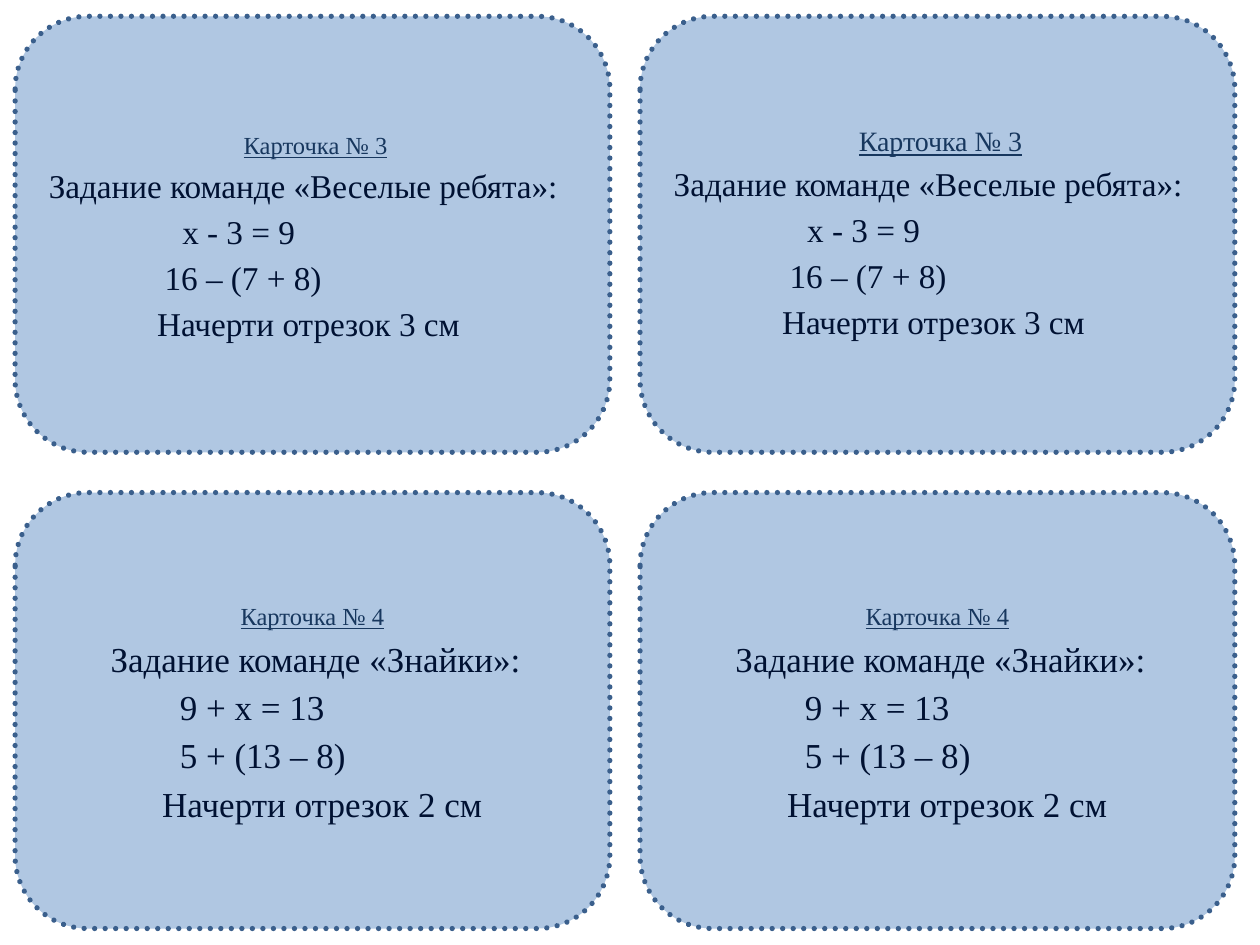
"""Build a slide with four task cards for two teams."""
from pptx import Presentation
from pptx.dml.color import RGBColor
from pptx.enum.dml import MSO_LINE
from pptx.enum.shapes import MSO_SHAPE
from pptx.enum.text import MSO_ANCHOR, PP_ALIGN
from pptx.util import Inches, Pt

ROUND = MSO_SHAPE.ROUNDED_RECTANGLE
DOTS = MSO_LINE.ROUND_DOT
MIDDLE = MSO_ANCHOR.MIDDLE
LEFT, CENTER, JUSTIFY = PP_ALIGN.LEFT, PP_ALIGN.CENTER, PP_ALIGN.JUSTIFY

# text, alignment, indent in inches
MERRY = [
    ("Карточка № 3", CENTER, 0.05),
    ("Задание команде «Веселые ребята»:", JUSTIFY, 0),
    ("х - 3 = 9", LEFT, 1.06),
    ("16 – (7 + 8)", LEFT, 0.92),
    ("Начерти отрезок 3 см", LEFT, 0.86),
]
CLEVER = [
    ("Карточка № 4", CENTER, 0),
    ("Задание команде «Знайки»:", LEFT, 0.49),
    ("9 + х = 13", LEFT, 1.04),
    ("5 + (13 – 8)", LEFT, 1.04),
    ("Начерти отрезок 2 см", LEFT, 0.9),
]
CARDS = [
    {"lines": MERRY, "title": 14, "body": 19, "bottom": 0.05},
    {"lines": MERRY, "title": 16, "body": 19, "bottom": 0.12},
    {"lines": CLEVER, "title": 14, "body": 20, "bottom": 0.05},
    {"lines": CLEVER, "title": 14, "body": 20, "bottom": 0.05},
]
THEME = {
    "font": "Times New Roman",
    "fill": RGBColor.from_string("B0C7E2"),
    "edge": RGBColor.from_string("3A5F8C"),
    "title": RGBColor.from_string("17375E"),
    "body": RGBColor.from_string("001132"),
    "width": Pt(3),
    "spacing": 1.15,
}
COLS = 2
X, Y, WIDTH, HEIGHT = 0.12, 0.13, 4.72, 3.46
STEP_X, STEP_Y = 4.96, 3.78


def add_line(para, line, role, size):
    text, align, indent = line
    para.text = text
    para.alignment = align
    para.line_spacing = THEME["spacing"]
    para._p.get_or_add_pPr().set("marL", str(Inches(indent)))
    font = para.font
    font.name = THEME["font"]
    font.size = Pt(size)
    font.color.rgb = THEME[role]
    font.underline = role == "title"


def add_card(slide, index, card):
    row, col = divmod(index, COLS)
    shape = slide.shapes.add_shape(
        ROUND, Inches(X + col * STEP_X), Inches(Y + row * STEP_Y),
        Inches(WIDTH), Inches(HEIGHT))
    shape.shadow.inherit = False
    shape.fill.solid()
    shape.fill.fore_color.rgb = THEME["fill"]
    shape.line.color.rgb = THEME["edge"]
    shape.line.width = THEME["width"]
    shape.line.dash_style = DOTS
    shape.get_or_add_ln().set("cap", "rnd")
    frame = shape.text_frame
    frame.word_wrap = True
    frame.vertical_anchor = MIDDLE
    frame.margin_bottom = Inches(card["bottom"])
    for number, line in enumerate(card["lines"]):
        para = frame.add_paragraph() if number else frame.paragraphs[0]
        role = "body" if number else "title"
        add_line(para, line, role, card[role])


def main():
    deck = Presentation()
    deck.slide_width, deck.slide_height = Inches(10), Inches(7.5)
    slide = deck.slides.add_slide(deck.slide_layouts[6])
    for index, card in enumerate(CARDS):
        add_card(slide, index, card)
    deck.save("out.pptx")


if __name__ == "__main__":
    main()
